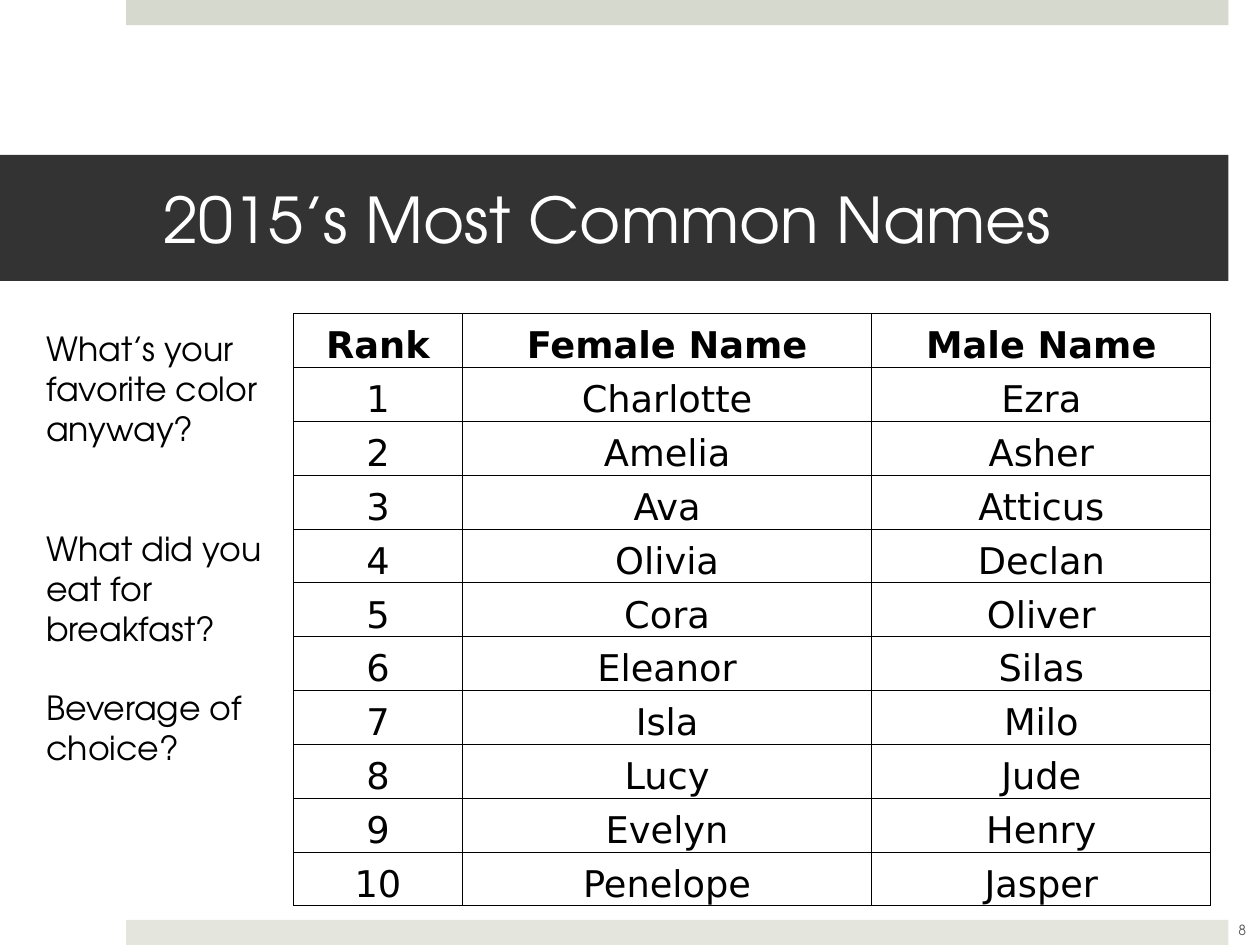
from lxml.etree import SubElement
from pptx import Presentation
from pptx.dml.color import RGBColor
from pptx.enum.shapes import MSO_SHAPE as Preset
from pptx.enum.text import MSO_ANCHOR as Anchor, PP_ALIGN as Align
from pptx.oxml.ns import qn
from pptx.util import Inches, Pt

HEADING_FONT, TABLE_FONT = "TeX Gyre Adventor", "DejaVu Sans"
TITLE = "2015’s Most Common Names"
PAGE_NUMBER = "8"
LINE_HEIGHT = 22.8
QUESTIONS = [
    ("What’s your favorite color anyway?", 0),
    ("What did you eat for breakfast?", 2),
    ("Beverage of choice?", 1),
]
HEADERS = ("Rank", "Female Name", "Male Name")
NAMES = [
    ("Charlotte", "Ezra"),
    ("Amelia", "Asher"),
    ("Ava", "Atticus"),
    ("Olivia", "Declan"),
    ("Cora", "Oliver"),
    ("Eleanor", "Silas"),
    ("Isla", "Milo"),
    ("Lucy", "Jude"),
    ("Evelyn", "Henry"),
    ("Penelope", "Jasper"),
]
BANDS = [(0, "D6D9CD"), (7.3, "E4E6DE")]
COLUMN_WIDTHS = (1.34, 3.25, 2.69)
TABLE_LEFT, TABLE_TOP, TABLE_HEIGHT = 2.33, 2.49, 4.7


def color(value):
    return RGBColor.from_string(value)


def write(paragraph, text, size, font, ink, align=Align.LEFT, bold=False):
    paragraph.alignment = align
    run = paragraph.add_run()
    run.text = text
    run.font.size = Pt(size)
    run.font.name = font
    run.font.bold = bold
    run.font.color.rgb = color(ink)


def add_bar(slide, box, fill):
    shape = slide.shapes.add_shape(Preset.RECTANGLE, *map(Inches, box))
    shape.shadow.inherit = False
    shape.fill.solid()
    shape.fill.fore_color.rgb = color(fill)
    shape.line.fill.background()
    return shape


def add_text_frame(slide, box):
    frame = slide.shapes.add_textbox(*map(Inches, box)).text_frame
    frame.word_wrap = True
    return frame


def set_borders(cell, ink, width):
    properties = cell._tc.get_or_add_tcPr()
    for position, side in enumerate(("lnL", "lnR", "lnT", "lnB")):
        line = properties.makeelement(qn(f"a:{side}"), {"w": str(Pt(width))})
        fill = SubElement(line, qn("a:solidFill"))
        SubElement(fill, qn("a:srgbClr"), val=ink)
        properties.insert(position, line)


def add_names_table(slide):
    rows = [HEADERS] + [(str(rank), *pair) for rank, pair in enumerate(NAMES, 1)]
    box = (TABLE_LEFT, TABLE_TOP, sum(COLUMN_WIDTHS), TABLE_HEIGHT)
    table = slide.shapes.add_table(len(rows), len(HEADERS), *map(Inches, box)).table
    for column, width in zip(table.columns, COLUMN_WIDTHS):
        column.width = Inches(width)
    for row_index, values in enumerate(rows):
        table.rows[row_index].height = Inches(TABLE_HEIGHT / len(rows))
        for column_index, value in enumerate(values):
            cell = table.cell(row_index, column_index)
            cell.fill.background()
            cell.vertical_anchor = Anchor.BOTTOM
            cell.margin_left = cell.margin_right = cell.margin_top = Inches(0.01)
            cell.margin_bottom = 0
            set_borders(cell, "000000", 0.5)
            write(cell.text_frame.paragraphs[0], value, 21, TABLE_FONT, "000000",
                  Align.CENTER, bold=row_index == 0)


def main():
    presentation = Presentation()
    presentation.slide_width, presentation.slide_height = Inches(10), Inches(7.5)
    slide = presentation.slides.add_slide(presentation.slide_layouts[6])

    for top, fill in BANDS:
        add_bar(slide, (1, top, 8.75, 0.2), fill)

    title = add_bar(slide, (0, 1.23, 9.75, 1), "333333").text_frame
    title.word_wrap = True
    title.vertical_anchor = Anchor.MIDDLE
    title.margin_left, title.margin_right = Inches(1.3), Inches(0.3)
    write(title.paragraphs[0], TITLE, 36, HEADING_FONT, "FFFFFF")

    number = add_text_frame(slide, (9.61, 7.18, 0.5, 0.4))
    number.vertical_anchor = Anchor.MIDDLE
    write(number.paragraphs[0], PAGE_NUMBER, 8, HEADING_FONT, "595959", Align.CENTER)

    questions = add_text_frame(slide, (0.27, 2.56, 2.06, 3.62))
    for index, (question, lines_before) in enumerate(QUESTIONS):
        paragraph = questions.add_paragraph() if index else questions.paragraphs[0]
        paragraph.space_before = Pt(lines_before * LINE_HEIGHT)
        write(paragraph, question, 19, HEADING_FONT, "000000")

    add_names_table(slide)
    presentation.save("out.pptx")


if __name__ == "__main__":
    main()
